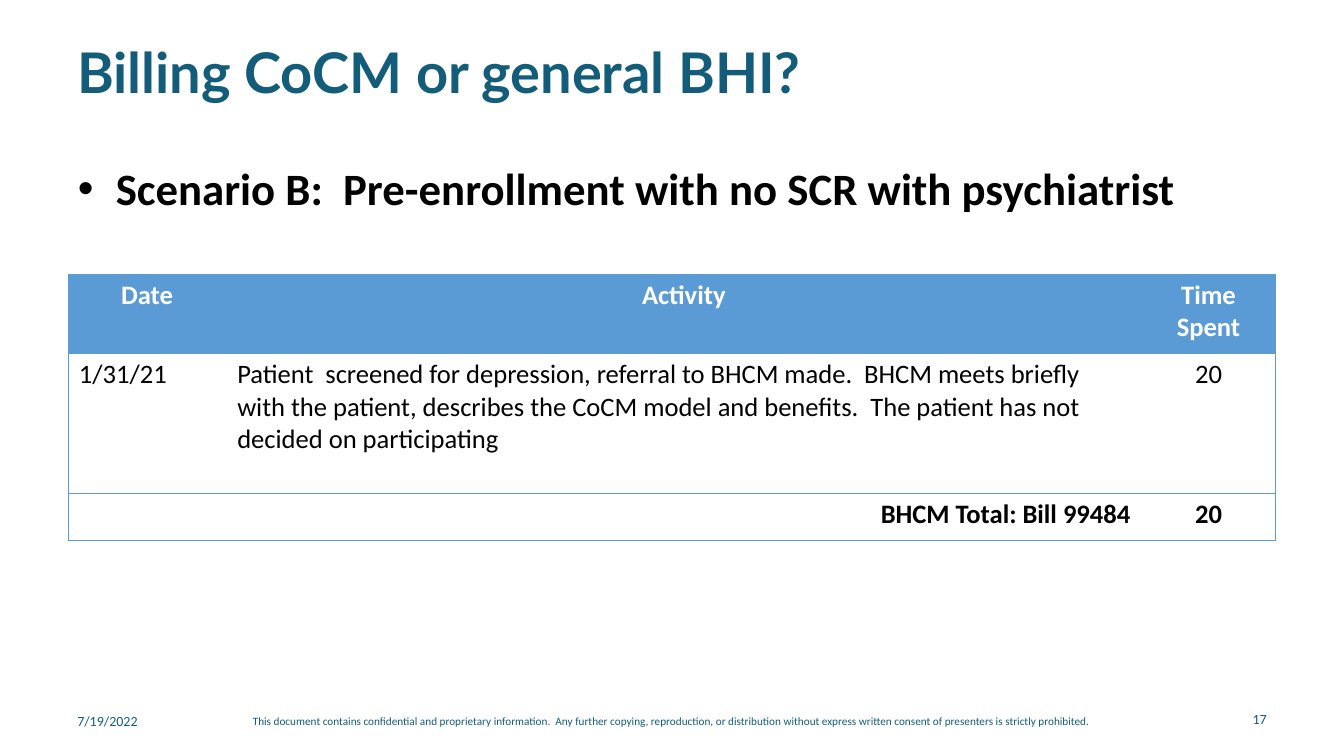
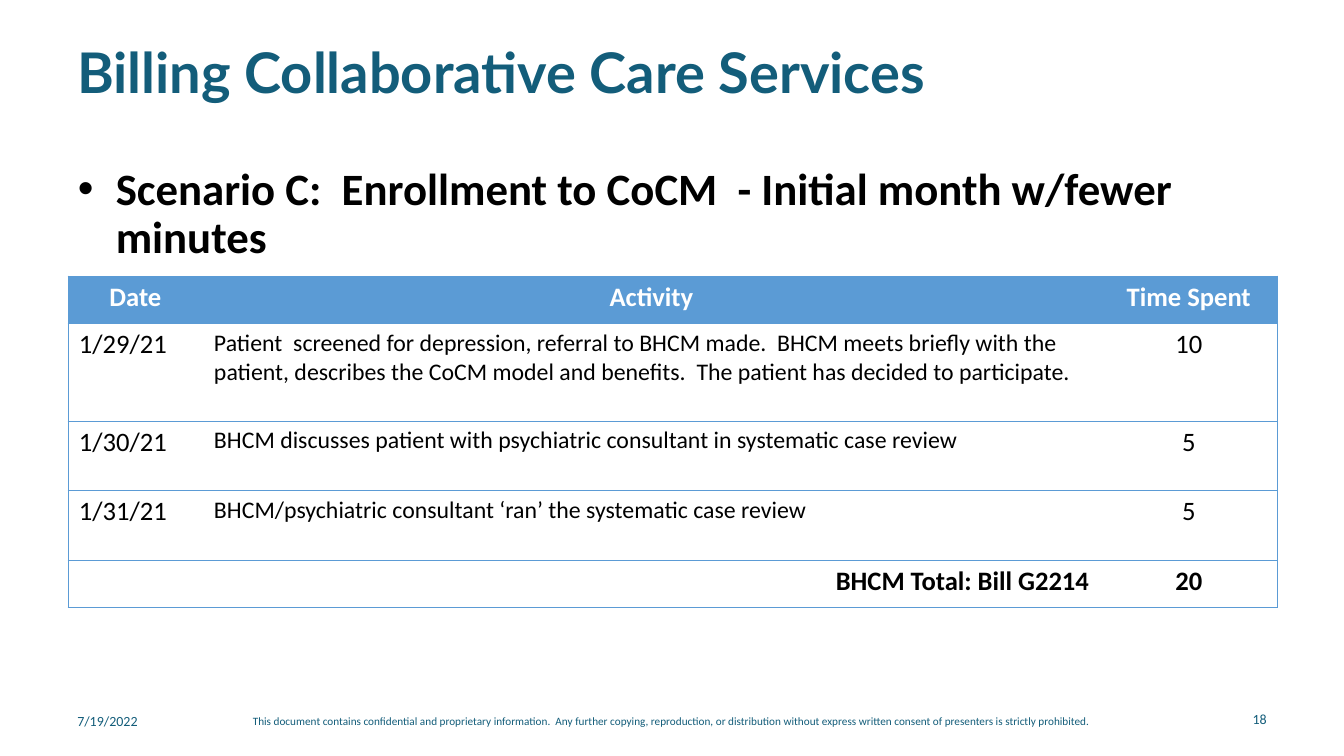
from copy import deepcopy

from lxml.etree import SubElement
from pptx import Presentation
from pptx.dml.color import RGBColor
from pptx.enum.text import MSO_ANCHOR, MSO_AUTO_SIZE, PP_ALIGN
from pptx.oxml.ns import qn
from pptx.util import Inches, Pt

TEAL = RGBColor(0x13, 0x5D, 0x7A)
BLUE = RGBColor(0x5B, 0x9B, 0xD5)
BLACK = RGBColor(0, 0, 0)
WHITE = RGBColor(255, 255, 255)
LEFT, MID, RIGHT = PP_ALIGN.LEFT, PP_ALIGN.CENTER, PP_ALIGN.RIGHT
PLAIN = "{2D5ABB26-0587-4C30-8999-92F81FD0307C}"  # table style without grid
NOTE = ("This document contains confidential and proprietary information.  "
        "Any further copying, reproduction, or distribution without express "
        "written consent of presenters is strictly prohibited.")
SCREEN = ("Patient  screened for depression, referral to BHCM made.  BHCM meets "
          "briefly with the patient, describes the CoCM model and benefits.  "
          "The patient has ")

# Areas, columns and rows are percentages of the slide's width and height.
SLIDES = [
    dict(page=17, head="Billing CoCM or general BHI?",
         scene="Scenario B:  Pre-enrollment with no SCR with psychiatrist",
         top=36.27, cols=[11.78, 68.1, 9.98], rows=[10.53, 18.4, 6.27], size=19,
         log=[("1/31/21", SCREEN + "not decided on participating", "20")],
         total=("", "BHCM Total: Bill 99484", "20")),
    dict(page=18, head="Billing Collaborative Care Services",
         scene="Scenario C:  Enrollment to CoCM  - Initial month w/fewer minutes",
         top=36.5, cols=[10.05, 66.75, 13.2], rows=[6.27, 12.93, 9.2, 9.2, 6.27],
         size=17,
         log=[("1/29/21", SCREEN + "decided to participate.", "10"),
              ("1/30/21", "BHCM discusses patient with psychiatric consultant "
                          "in systematic case review", "5"),
              ("1/31/21", "BHCM/psychiatric consultant ‘ran’ the systematic "
                          "case review", "5")],
         total=("", "BHCM Total: Bill G2214", "20")),
]

deck = Presentation()
deck.slide_width, deck.slide_height = Inches(13.33), Inches(7.5)
COL, ROW = deck.slide_width / 100, deck.slide_height / 100
layout = deck.slide_layouts[1]


def style(frame, text, size, color, bold=False, align=LEFT, font="Calibri"):
    """Write one paragraph into a frame and format it."""
    frame.text = text
    para = frame.paragraphs[0]
    para.alignment = align
    para.font.size, para.font.name = Pt(size), font
    for run in para.runs:
        run.font.size, run.font.name, run.font.bold = Pt(size), font, bold
        run.font.color.rgb = color
    return para


def place(shape, x, y, w, h):
    """Move a placeholder to an area and anchor its text at the top."""
    shape.left, shape.top = int(x * COL), int(y * ROW)
    shape.width, shape.height = int(w * COL), int(h * ROW)
    frame = shape.text_frame
    frame.word_wrap = True
    frame.auto_size = MSO_AUTO_SIZE.NONE
    frame.vertical_anchor = MSO_ANCHOR.TOP
    return frame


for data in SLIDES:
    slide = deck.slides.add_slide(layout)
    title, body = slide.shapes.title, slide.placeholders[1]

    frame = place(title, 5, 5.33, 88.1, 8.3)
    para = style(frame, data["head"], 40, TEAL, True, font="Lato")
    para.line_spacing = 0.9

    frame = place(body, 5.05, 21.4, 90, 14)
    props = frame.paragraphs[0]._p.get_or_add_pPr()
    props.set("marL", "0")
    props.set("indent", "0")
    SubElement(props, qn("a:buNone"))
    para = style(frame, data["scene"], 32, BLACK, True)
    para.line_spacing, para.space_before = 0.9, Pt(0)

    # Date, footer and page number placeholders by index
    feet = {10: ((5, 93.6, 7.6, 5.3), "7/19/2022", 10, LEFT),
            11: ((12.6, 93.87, 74.8, 5.3), NOTE, 8, MID),
            12: ((87.4, 93.33, 7.6, 5.3), str(data["page"]), 10, RIGHT)}
    for base in layout.placeholders:
        idx = base.placeholder_format.idx
        if idx in feet:
            area, text, size, align = feet[idx]
            title.element.getparent().append(deepcopy(base.element))
            frame = place(slide.shapes[-1], *area)
            style(frame, text, size, TEAL, align=align)

    cols, rows = data["cols"], data["rows"]
    shape = slide.shapes.add_table(
        len(rows), len(cols), int(5.05 * COL), int(data["top"] * ROW),
        int(sum(cols) * COL), int(sum(rows) * ROW))
    table = shape.table
    table._tbl.tblPr.find(qn("a:tableStyleId")).text = PLAIN
    for col, share in zip(table.columns, cols):
        col.width = int(share * COL)
    for row, share in zip(table.rows, rows):
        row.height = int(share * ROW)

    last = len(rows) - 1
    lines = [("Date", "Activity", "Time Spent"), *data["log"], data["total"]]
    for r, line in enumerate(lines):
        for c, text in enumerate(line):
            cell = table.cell(r, c)
            cell.margin_left = cell.margin_right = Inches(0.11)
            edges = ["lnL"] * (c == 0) + ["lnR"] * (c == 2) + ["lnT", "lnB"]
            for edge in edges:
                rule = SubElement(cell._tc.get_or_add_tcPr(), qn("a:" + edge),
                                  w=str(Pt(0.5)))
                fill = SubElement(rule, qn("a:solidFill"))
                SubElement(fill, qn("a:srgbClr"), val=str(BLUE))
            cell.fill.solid()
            cell.fill.fore_color.rgb = BLUE if r == 0 else WHITE
            align = MID if r == 0 or c == 2 else RIGHT if r == last else LEFT
            size = data["size"] if c == 1 and 0 < r < last else 19
            style(cell.text_frame, text, size, BLACK if r else WHITE,
                  r in (0, last), align)

deck.save("out.pptx")
